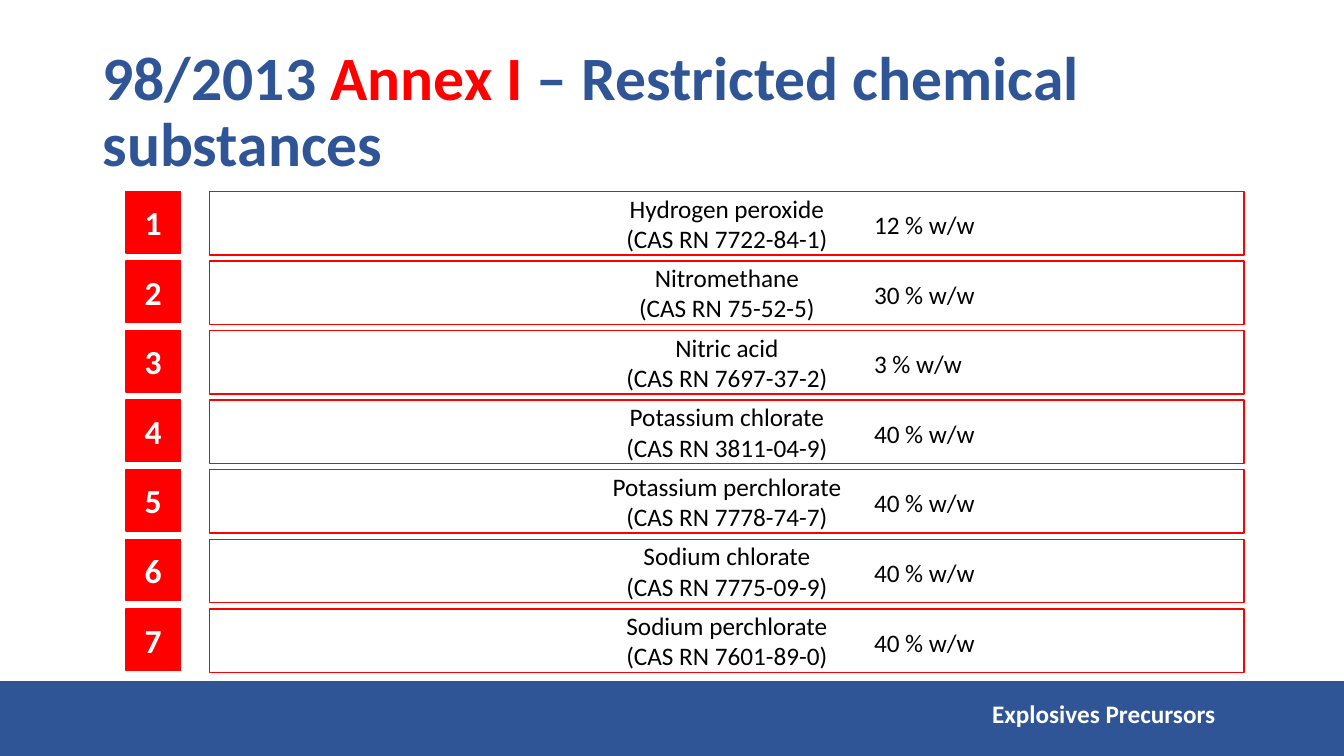
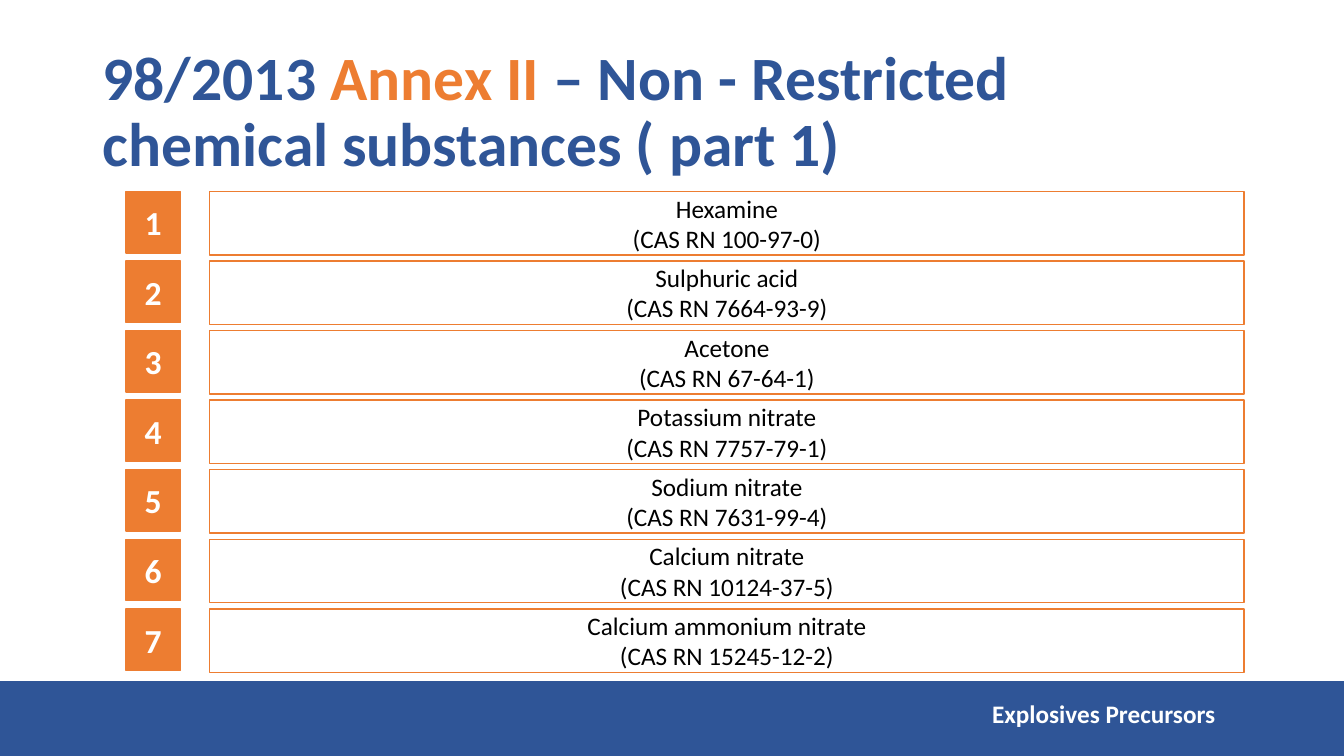
from pptx import Presentation
from pptx.dml.color import RGBColor
from pptx.enum.shapes import MSO_SHAPE
from pptx.enum.text import MSO_ANCHOR, PP_ALIGN
from pptx.util import Inches, Pt

BLUE, RED, ORANGE = "2F5597", "FF0000", "ED7D31"
WHITE, BLACK = "FFFFFF", "000000"
FONT = "Calibri"
ROW_TOP, ROW_PITCH = 1.9, 0.69

RESTRICTED = [
    ("Hydrogen peroxide", "7722-84-1", "12 % w/w"),
    ("Nitromethane", "75-52-5", "30 % w/w"),
    ("Nitric acid", "7697-37-2", "3 % w/w"),
    ("Potassium chlorate", "3811-04-9", "40 % w/w"),
    ("Potassium perchlorate", "7778-74-7", "40 % w/w"),
    ("Sodium chlorate", "7775-09-9", "40 % w/w"),
    ("Sodium perchlorate", "7601-89-0", "40 % w/w"),
]
NON_RESTRICTED = [
    ("Hexamine", "100-97-0", None),
    ("Sulphuric acid", "7664-93-9", None),
    ("Acetone", "67-64-1", None),
    ("Potassium nitrate", "7757-79-1", None),
    ("Sodium nitrate", "7631-99-4", None),
    ("Calcium nitrate", "10124-37-5", None),
    ("Calcium ammonium nitrate", "15245-12-2", None),
]


def rgb(value):
    return RGBColor.from_string(value)


class Deck:
    """Holds the shared style and the slide being built."""

    def __init__(self):
        self.prs = Presentation()
        self.prs.slide_width = Inches(13.33)
        self.prs.slide_height = Inches(7.5)
        self.slide = None

    def style(self, run, size, color, bold):
        run.font.name = FONT
        run.font.size = Pt(size)
        run.font.bold = bold
        run.font.color.rgb = rgb(color)

    def set_text(self, tf, text, size, color, bold, align):
        tf.text = text
        tf.word_wrap = True
        for p in tf.paragraphs:
            p.alignment = align
            for r in p.runs:
                self.style(r, size, color, bold)

    def box(self, x, y, w, h, fill, line, text="", size=18, color=BLACK, bold=False):
        sp = self.slide.shapes.add_shape(
            MSO_SHAPE.RECTANGLE, Inches(x), Inches(y), Inches(w), Inches(h))
        sp.shadow.inherit = False
        sp.fill.solid()
        sp.fill.fore_color.rgb = rgb(fill)
        sp.line.color.rgb = rgb(line)
        sp.line.width = Pt(1)
        if text:
            sp.text_frame.vertical_anchor = MSO_ANCHOR.MIDDLE
            self.set_text(sp.text_frame, text, size, color, bold, PP_ALIGN.CENTER)

    def label(self, x, y, w, text, color=BLACK, bold=False, align=PP_ALIGN.LEFT):
        tb = self.slide.shapes.add_textbox(Inches(x), Inches(y), Inches(w), Inches(0.4))
        self.set_text(tb.text_frame, text, 18, color, bold, align)

    def title(self, parts):
        tb = self.slide.shapes.add_textbox(
            Inches(0.92), Inches(0.4), Inches(11.5), Inches(1.45))
        tf = tb.text_frame
        tf.word_wrap = True
        tf.vertical_anchor = MSO_ANCHOR.MIDDLE
        p = tf.paragraphs[0]
        p.line_spacing = 0.9
        for text, color in parts:
            r = p.add_run()
            r.text = text
            self.style(r, 44, color, True)

    def footer(self):
        self.box(0, 6.76, 13.33, 0.74, BLUE, BLUE)
        self.label(5.54, 6.88, 6.67, "Explosives Precursors ", WHITE, True, PP_ALIGN.RIGHT)

    def substance(self, index, name, cas, limit, accent):
        y = ROW_TOP + index * ROW_PITCH
        self.box(1.25, y, 0.54, 0.61, accent, accent, str(index + 1), 24, WHITE, True)
        self.box(2.08, y, 10.26, 0.63, WHITE, accent, f"{name}\n(CAS RN {cas})")
        if limit:
            self.label(8.57, y + 0.13, 2.39, limit)

    def annex(self, name, rest, accent, substances):
        self.slide = self.prs.slides.add_slide(self.prs.slide_layouts[6])
        self.title([("98/2013 ", BLUE), (name, accent), (rest, BLUE)])
        self.footer()
        for i, (substance, cas, limit) in enumerate(substances):
            self.substance(i, substance, cas, limit, accent)


def main():
    deck = Deck()
    deck.annex("Annex I", " – Restricted chemical substances", RED, RESTRICTED)
    deck.annex("Annex II ", "– Non - Restricted chemical substances ( part 1)",
               ORANGE, NON_RESTRICTED)
    deck.prs.save("out.pptx")


if __name__ == "__main__":
    main()
